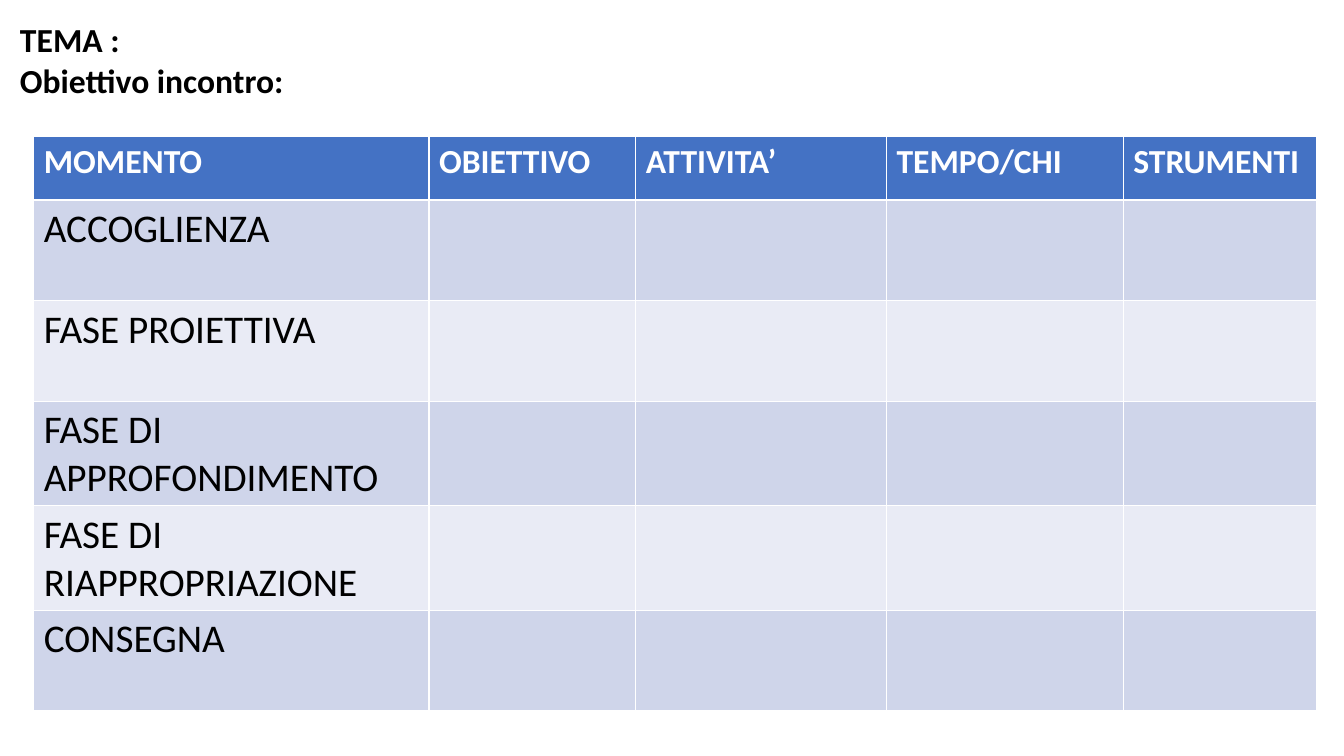
"""Build the meeting planning slide with its theme heading and phase table."""
from pptx import Presentation
from pptx.dml.color import RGBColor
from pptx.enum.text import MSO_ANCHOR, MSO_AUTO_SIZE, PP_ALIGN
from pptx.util import Cm, Pt

BLACK = RGBColor(0x00, 0x00, 0x00)
WHITE = RGBColor(0xFF, 0xFF, 0xFF)
HEADER_BLUE = RGBColor(0x44, 0x72, 0xC4)
BAND_DARK = RGBColor(0xCF, 0xD5, 0xEA)
BAND_LIGHT = RGBColor(0xE9, 0xEB, 0xF5)

HEADINGS = ["MOMENTO", "OBIETTIVO", "ATTIVITA’", "TEMPO/CHI", "STRUMENTI"]
PHASES = [
    "ACCOGLIENZA",
    "FASE PROIETTIVA",
    "FASE DI APPROFONDIMENTO",
    "FASE DI RIAPPROPRIAZIONE",
    "CONSEGNA",
]
COLUMN_WIDTHS = [9.96, 5.21, 6.32, 5.97, 4.88]
HEADER_HEIGHT = 1.6
PHASE_HEIGHT = 2.54

TITLE_FORMAT = {"name": "Calibri", "size": Pt(24), "bold": True}
HEADER_FORMAT = {"name": "Calibri", "size": Pt(24), "bold": True}
PHASE_FORMAT = {"name": "Calibri", "size": Pt(28), "bold": False}


def format_paragraph(paragraph, values, color):
    for name, value in values.items():
        setattr(paragraph.font, name, value)
    paragraph.font.color.rgb = color


presentation = Presentation()
presentation.slide_width = Cm(33.87)
presentation.slide_height = Cm(19.05)
slide = presentation.slides.add_slide(presentation.slide_layouts[5])

title = slide.shapes.title
title.left, title.top, title.width, title.height = Cm(0.25), Cm(0.36), Cm(32.33), Cm(2.31)
title.text_frame.text = "TEMA :\nObiettivo incontro:"
title.text_frame.word_wrap = True
title.text_frame.auto_size = MSO_AUTO_SIZE.SHAPE_TO_FIT_TEXT
title.text_frame.vertical_anchor = MSO_ANCHOR.TOP
for paragraph in title.text_frame.paragraphs:
    paragraph.alignment = PP_ALIGN.LEFT
    format_paragraph(paragraph, TITLE_FORMAT, BLACK)

table = slide.shapes.add_table(
    len(PHASES) + 1,
    len(HEADINGS),
    Cm(0.85),
    Cm(3.44),
    Cm(sum(COLUMN_WIDTHS)),
    Cm(HEADER_HEIGHT + PHASE_HEIGHT * len(PHASES)),
).table
for column, width in zip(table.columns, COLUMN_WIDTHS):
    column.width = Cm(width)
table.rows[0].height = Cm(HEADER_HEIGHT)

for column_index, heading in enumerate(HEADINGS):
    cell = table.cell(0, column_index)
    cell.text = heading
    cell.fill.solid()
    cell.fill.fore_color.rgb = HEADER_BLUE
    format_paragraph(cell.text_frame.paragraphs[0], HEADER_FORMAT, WHITE)

for row_index, phase in enumerate(PHASES, start=1):
    table.rows[row_index].height = Cm(PHASE_HEIGHT)
    for cell in table.rows[row_index].cells:
        cell.fill.solid()
        cell.fill.fore_color.rgb = BAND_DARK if row_index % 2 else BAND_LIGHT
    phase_cell = table.cell(row_index, 0)
    phase_cell.text = phase
    format_paragraph(phase_cell.text_frame.paragraphs[0], PHASE_FORMAT, BLACK)

presentation.save("out.pptx")
